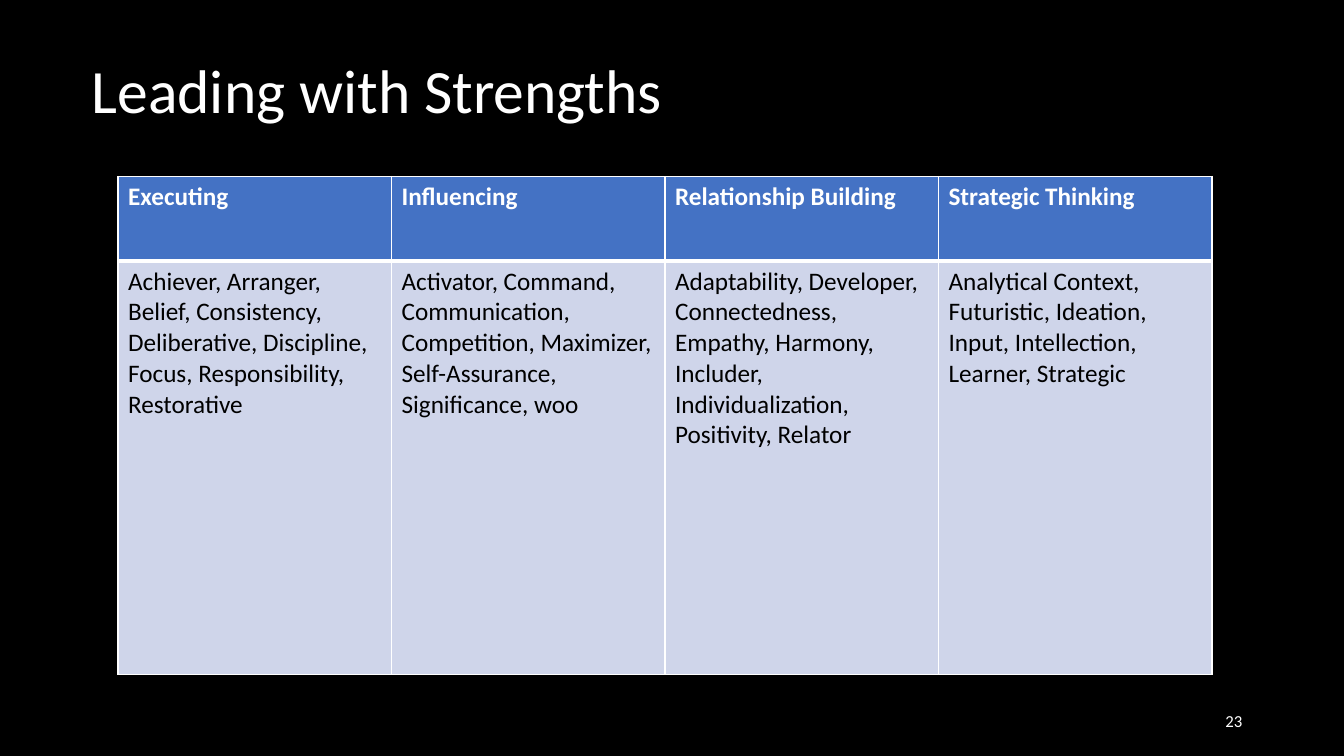
"""Build the slide on leading with strengths."""
from dataclasses import dataclass

from lxml.etree import SubElement
from pptx import Presentation
from pptx.dml.color import RGBColor
from pptx.enum.text import MSO_ANCHOR, PP_ALIGN
from pptx.oxml.ns import qn
from pptx.slide import Slide
from pptx.table import _Cell
from pptx.text.text import TextFrame
from pptx.util import Inches, Pt

WIDE, HIGH = Inches(13.33), Inches(7.5)
WHITE, BLACK, BLUE, PALE = "FFFFFF", "000000", "4472C4", "CFD5EA"
HEAD = 0.17


@dataclass
class Box:
    left: float
    top: float
    width: float
    height: float

    def place(self) -> tuple[int, int, int, int]:
        sides = (self.left, WIDE), (self.top, HIGH), (self.width, WIDE), (self.height, HIGH)
        return tuple(round(full * part / 100) for part, full in sides)


@dataclass
class Label:
    text: str
    box: Box
    size: int
    align: PP_ALIGN = PP_ALIGN.LEFT
    space: float = 1.0


@dataclass
class Theme:
    name: str
    traits: str


@dataclass
class Band:
    field: str
    fill: str
    ink: str
    bold: bool
    edges: dict[str, int]


LABELS = [
    Label("Leading with Strengths", Box(6.08, 4, 72.39, 16.67), 44, space=0.9),
    Label("23", Box(70.67, 92.67, 22.5, 5.33), 12, PP_ALIGN.RIGHT),
]
GRID = Box(8.78, 23.33, 81.4, 65.87)
THEMES = [
    Theme("Executing", "Achiever, Arranger, Belief, Consistency, Deliberative, "
          "Discipline, Focus, Responsibility, Restorative"),
    Theme("Influencing", "Activator, Command, Communication, Competition, "
          "Maximizer, Self-Assurance, Significance, woo"),
    Theme("Relationship Building", "Adaptability, Developer, Connectedness, Empathy, "
          "Harmony, Includer, Individualization, Positivity, Relator"),
    Theme("Strategic Thinking", "Analytical Context, Futuristic, Ideation, Input, "
          "Intellection, Learner, Strategic"),
]
BANDS = [
    Band("name", BLUE, WHITE, True, {"L": 1, "R": 1, "T": 1, "B": 3}),
    Band("traits", PALE, BLACK, False, {"L": 1, "R": 1, "T": 3, "B": 1}),
]


def tint(code: str) -> RGBColor:
    return RGBColor.from_string(code)


def write(frame: TextFrame, text: str, size: int, ink: str, bold: bool = False) -> None:
    frame.word_wrap = True
    frame.text = text
    font = frame.paragraphs[0].runs[0].font
    for key, value in {"name": "Calibri", "size": Pt(size), "bold": bold}.items():
        setattr(font, key, value)
    font.color.rgb = tint(ink)


def add_label(slide: Slide, label: Label) -> None:
    frame = slide.shapes.add_textbox(*label.box.place()).text_frame
    write(frame, label.text, label.size, WHITE)
    frame.vertical_anchor = MSO_ANCHOR.MIDDLE
    line = frame.paragraphs[0]
    for key, value in {"alignment": label.align, "line_spacing": label.space}.items():
        setattr(line, key, value)


def add_edges(cell: _Cell, edges: dict[str, int]) -> None:
    props = cell._tc.get_or_add_tcPr()
    for side, width in edges.items():
        edge = SubElement(props, qn(f"a:ln{side}"), w=str(Pt(width)))
        fill = SubElement(edge, qn("a:solidFill"))
        SubElement(fill, qn("a:srgbClr"), val=WHITE)


def add_grid(slide: Slide, box: Box) -> None:
    table = slide.shapes.add_table(len(BANDS), len(THEMES), *box.place()).table
    tall = box.place()[3]
    for row, share in zip(table.rows, (HEAD, 1 - HEAD)):
        row.height = round(tall * share)
    for r, band in enumerate(BANDS):
        for c, theme in enumerate(THEMES):
            cell = table.cell(r, c)
            add_edges(cell, band.edges)
            cell.fill.solid()
            cell.fill.fore_color.rgb = tint(band.fill)
            write(cell.text_frame, getattr(theme, band.field), 18, band.ink, band.bold)


def main() -> None:
    deck = Presentation()
    deck.slide_width, deck.slide_height = WIDE, HIGH
    slide = deck.slides.add_slide(deck.slide_layouts[6])
    slide.background.fill.solid()
    slide.background.fill.fore_color.rgb = tint(BLACK)
    add_grid(slide, GRID)
    for label in LABELS:
        add_label(slide, label)
    deck.save("out.pptx")


if __name__ == "__main__":
    main()
